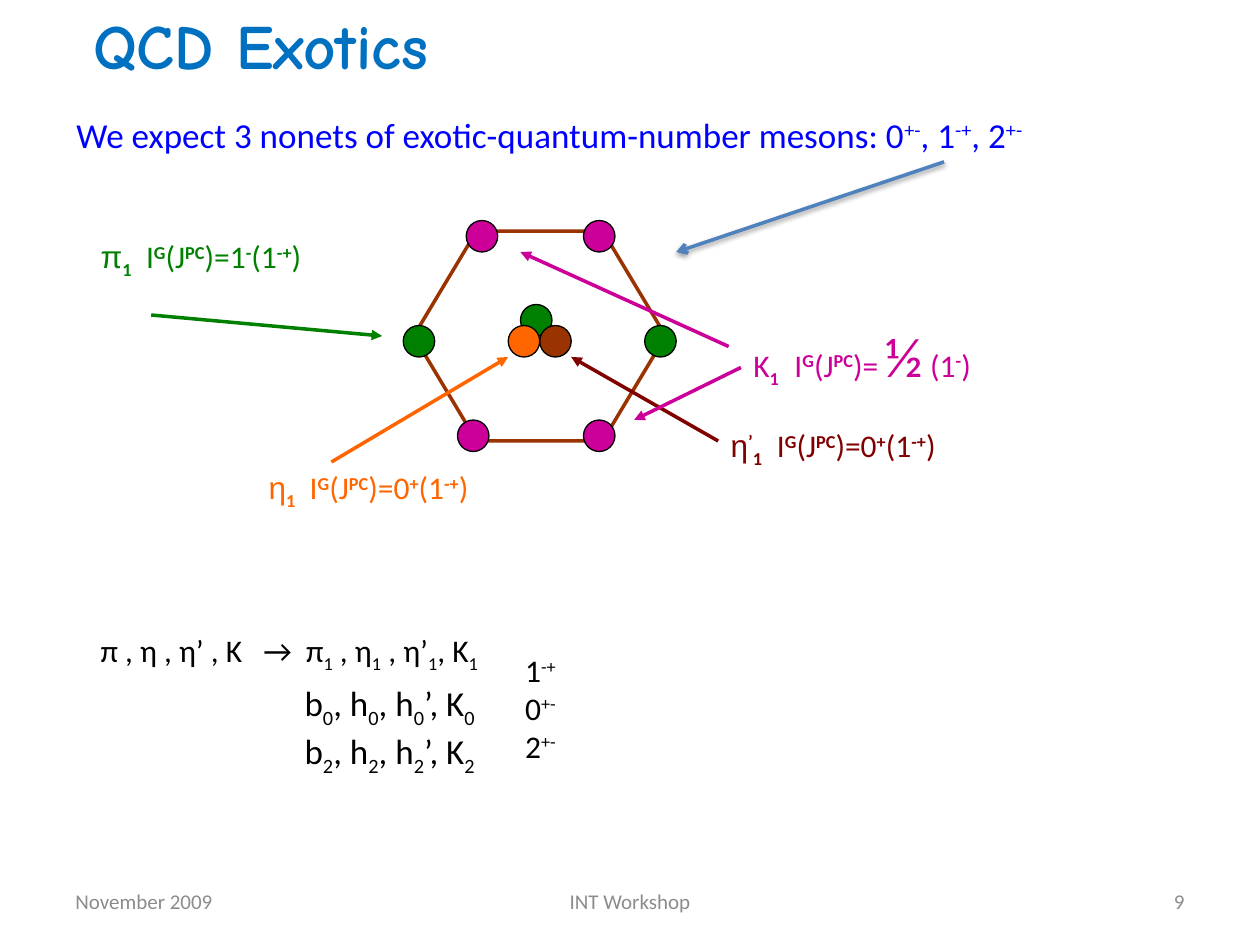
from lxml import etree
from pptx import Presentation
from pptx.dml.color import RGBColor
from pptx.enum.shapes import MSO_CONNECTOR, MSO_SHAPE
from pptx.enum.text import MSO_ANCHOR, PP_ALIGN
from pptx.oxml.ns import qn
from pptx.util import Pt

LEFT, CENTER, RIGHT = PP_ALIGN.LEFT, PP_ALIGN.CENTER, PP_ALIGN.RIGHT
TOP, MIDDLE = MSO_ANCHOR.TOP, MSO_ANCHOR.MIDDLE
STRAIGHT = MSO_CONNECTOR.STRAIGHT
HEXAGON, OVAL = MSO_SHAPE.HEXAGON, MSO_SHAPE.OVAL

BLACK = RGBColor(0, 0, 0)
GRAY = RGBColor(0x8C, 0x8C, 0x8C)
TITLE_BLUE = RGBColor(0, 0x70, 0xC0)
BLUE = RGBColor(0, 0, 0xFF)
STEEL = RGBColor(0x4F, 0x81, 0xBD)
GREEN = RGBColor(0, 0x80, 0)
MAROON = RGBColor(0x80, 0, 0)
BROWN = RGBColor(0x99, 0x33, 0)
ORANGE = RGBColor(0xFF, 0x66, 0)
MAGENTA = RGBColor(0xCC, 0, 0x99)

BASELINES = {"^": "30000", "_": "-25000"}
DOT = 18


def add_tabs(p, stops):
    tabs = etree.SubElement(p._p.get_or_add_pPr(), qn("a:tabLst"))
    for stop in stops:
        etree.SubElement(tabs, qn("a:tab"), pos=str(Pt(stop)), algn="l")


def add_run(p, text, **fmt):
    r = p.add_run()
    r.text = text
    color = fmt.pop("color")
    for name, value in fmt.items():
        setattr(r.font, name, value)
    r.font.color.rgb = color
    return r


def add_text(s, box, lines, size, color, font="Calibri", bold=False, align=LEFT,
             anchor=TOP, wrap=True, tabs=(), script_bold=False, first_font=None):
    """Parts of a line are split by |; ^ raises a part, _ lowers it, # enlarges it."""
    tf = s.shapes.add_textbox(*map(Pt, box)).text_frame
    tf.word_wrap, tf.vertical_anchor = wrap, anchor
    for i, line in enumerate(lines):
        p = tf.add_paragraph() if i else tf.paragraphs[0]
        p.alignment = align
        if tabs:
            add_tabs(p, tabs)
        for j, part in enumerate(line.split("|")):
            mark = part[0] if part[0] in "^_#" else ""
            r = add_run(p, part[len(mark):], color=color,
                        size=Pt(32 if mark == "#" else size),
                        name=first_font if first_font and j == 0 else font,
                        bold=script_bold if mark in BASELINES else bold)
            if mark in BASELINES:
                r._r.get_or_add_rPr().set("baseline", BASELINES[mark])


def add_arrow(s, start, end, color, head="triangle", shadow=False):
    c = s.shapes.add_connector(STRAIGHT, *map(Pt, (*start, *end)))
    c.line.color.rgb, c.line.width = color, Pt(2)
    etree.SubElement(c.line._get_or_add_ln(), qn("a:tailEnd"), type=head)
    effects = etree.SubElement(c._element.spPr, qn("a:effectLst"))
    if shadow:
        outer = etree.SubElement(effects, qn("a:outerShdw"), blurRad=str(Pt(3.1)),
                                 dist=str(Pt(1.6)), dir="5400000", rotWithShape="0")
        clr = etree.SubElement(outer, qn("a:srgbClr"), val=str(BLACK))
        etree.SubElement(clr, qn("a:alpha"), val="38000")


def add_outline(s, kind, box, line, width, fill=None):
    sp = s.shapes.add_shape(kind, *map(Pt, box))
    sp.shadow.inherit = False
    sp.line.color.rgb, sp.line.width = line, Pt(width)
    if fill is None:
        sp.fill.background()
    else:
        sp.fill.solid()
        sp.fill.fore_color.rgb = fill
    return sp


def add_heading(s, x, y):
    add_text(s, (x, y, 298, 51), ["QCD Exotics"], 36, TITLE_BLUE,
             font="Comic Neue", bold=True, align=CENTER)
    add_text(s, (x + 36.6, y + 61.2, 564, 32),
             ["We expect 3 nonets of exotic-quantum-number mesons: 0|^+-|, 1|^-+|, 2|^+-"],
             20, BLUE, wrap=False)


def add_nonet(s, x, y, w, h):
    """Hexagon of mesons, with labels and arrows placed from its top left."""
    hexagon = add_outline(s, HEXAGON, (x + 6, y + 6, w - 12, h - 12), BROWN, 2)
    hexagon.adjustments[0] = 0.3
    mid = (h - DOT + 6) / 2
    dots = [(103, h - DOT, MAGENTA), (0, mid, GREEN), (67, mid - 12, GREEN),
            (w - DOT, mid, GREEN), (78, mid, BROWN), (60, mid, ORANGE),
            (36, 0, MAGENTA), (103, 0, MAGENTA), (31, h - DOT, MAGENTA)]
    for dx, dy, color in dots:
        add_outline(s, OVAL, (x + dx, y + dy, DOT, DOT), BLACK, 0.75, color)

    quantum = "\tI|^G|(J|^PC|)="
    labels = [(-180, 6, 208, GREEN, "Arial", 26, "π|_1|", "1|^-|(1|^-+|)"),
              (180, 114, 224, MAROON, "Arial", 26.5, "η|^’|_1|", "0|^+|(1|^-+|)"),
              (-84, 138, 220, ORANGE, "Arial", 23.5, "η|_1|", "0|^+|(1|^-+|)"),
              (193, 54, 215, MAGENTA, "Calibri", 23.5, "K|_1|", " |#½| (1|^-|)")]
    for dx, dy, width, color, font, tab, name, value in labels:
        add_text(s, (x + dx, y + dy, width, 36), [name + quantum + value], 18, color,
                 tabs=[tab], script_bold=True, first_font=font)

    arrows = [((180, 126), (96, 78), MAROON), ((-41, 138), (60, 78), ORANGE),
              ((193, 84), (132, 114), MAGENTA), ((186, 72), (67, 18), MAGENTA),
              ((-144, 54), (-12, 66), GREEN)]
    for (x1, y1), (x2, y2), color in arrows:
        add_arrow(s, (x + x1, y + y1), (x + x2, y + y2), color)


def add_families(s, x, y):
    add_text(s, (x, y, 245, 29),
             ["π , η , η’ , K\t→\tπ|_1| , η|_1| , η’|_1|, K|_1"], 18, BLACK,
             tabs=[93, 117.5])
    add_text(s, (x + 116.6, y + 29, 116, 55),
             [f"b|_{n}|, h|_{n}|, h|_{n}|’, K|_{n}" for n in (0, 2)], 20, BLACK, wrap=False)
    add_text(s, (x + 242.6, y + 11.5, 34, 73), ["1|^-+", "0|^+-", "2|^+-"],
             18, BLACK, wrap=False)


def add_footer(s, y, h):
    for x, w, text, align in [(36, 168, "November 2009", LEFT),
                              (246, 228, "INT Workshop", CENTER),
                              (516, 168, "9", RIGHT)]:
        add_text(s, (x, y, w, h), [text], 12, GRAY, align=align, anchor=MIDDLE)


def main():
    prs = Presentation()
    prs.slide_width, prs.slide_height = Pt(720), Pt(540)
    s = prs.slides.add_slide(prs.slide_layouts[6])
    add_footer(s, 500.5, 28.75)
    add_heading(s, 0, 0)
    add_nonet(s, 230.4, 126, 156, 132)
    add_arrow(s, (539.5, 92.5), (386.5, 144), STEEL, head="arrow", shadow=True)
    add_families(s, 50.4, 357)
    prs.save("out.pptx")


if __name__ == "__main__":
    main()
